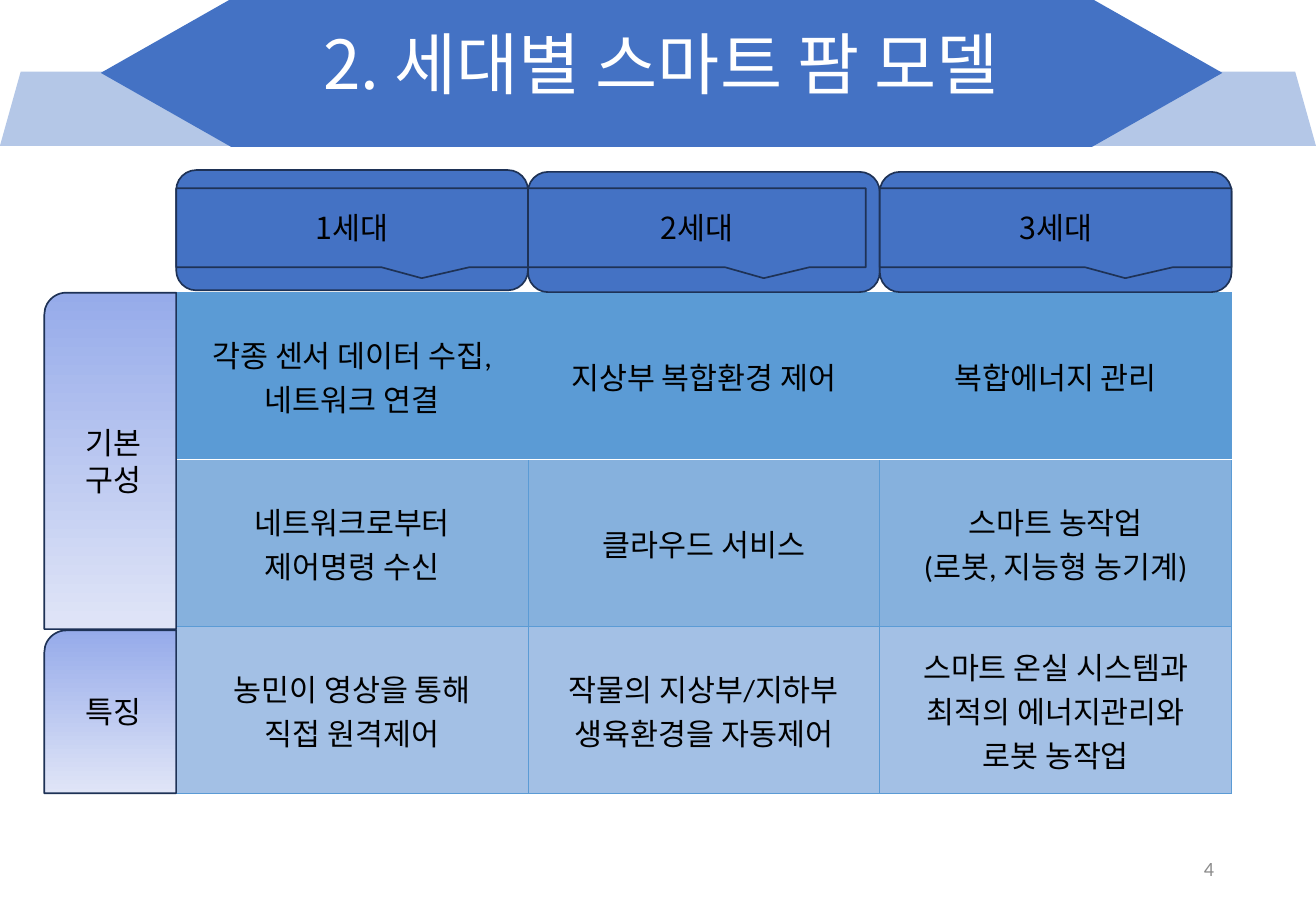
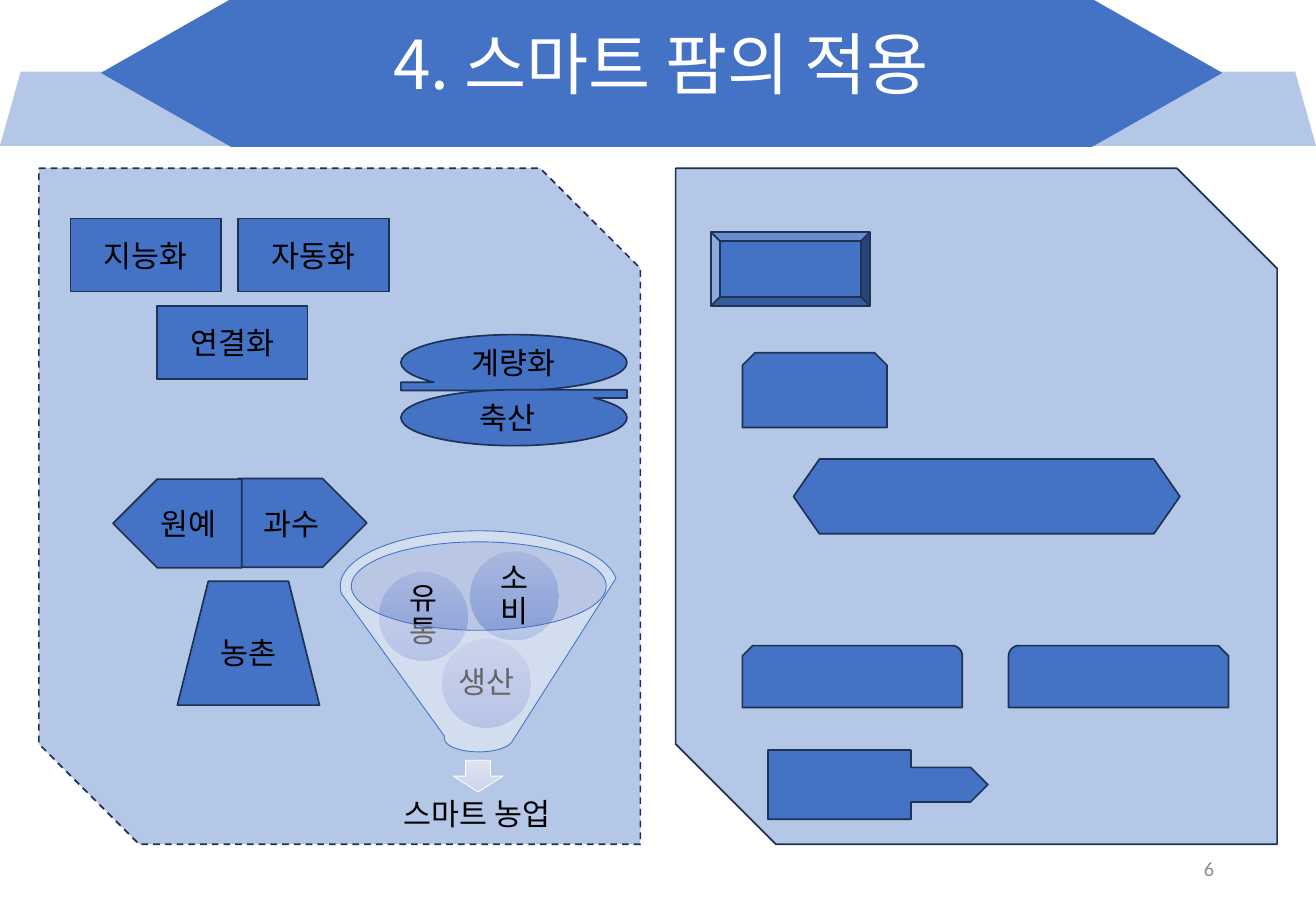
"""Build two slides on smart farm generations and smart farm applications."""
from lxml import etree
from pptx import Presentation
from pptx import util as u
from pptx.dml.color import RGBColor
from pptx.enum import dml, shapes, text
from pptx.oxml import ns

CELL = u.Inches(0.1)
COLUMNS, ROWS = 108.3, 75
BLUE, PALE, NAVY, SKY = "4472C4", "B4C7E7", "1E3256", "5B9BD5"
BLACK, WHITE, GREY = "000000", "FFFFFF", "8C8C8C"
LILAC = ("96ABEA", "E0E5F7")
BALL = ("A8B7DF", "889ED7")
ARROW = ("DEE3F2", "CCD3EB")
KOREAN, LATIN = "Noto Sans CJK KR", "Calibri"
Kind = shapes.MSO_SHAPE
Align = text.PP_ALIGN
color = RGBColor.from_string


def write(frame, words, size=18, ink=BLACK, font=KOREAN, align=Align.CENTER, spacing=None):
    para = frame.paragraphs[0]
    para.alignment = align
    if spacing:
        para.line_spacing = spacing
    for number, line in enumerate(words.split("\n")):
        if number:
            para.add_line_break()
        span = para.add_run()
        span.text = line
        span.font.size = u.Pt(size)
        span.font.name = font
        span.font.color.rgb = color(ink)
        etree.SubElement(span.font._element, ns.qn("a:ea"), typeface=KOREAN)


def draw(parent, kind, left, top, width, height, words="", fill=BLUE, line=NAVY, weight=1,
         adjust=(), flip=None, alpha=None, inset=None, **style):
    place = [round(value * CELL) for value in (left, top, width, height)]
    if kind is None:
        box = parent.add_textbox(*place)
    else:
        box = parent.add_shape(kind, *place)
        box.shadow.inherit = False
        if isinstance(fill, tuple):
            box.fill.gradient()
            box.fill.gradient_angle = 270
            for stop, shade in zip(box.fill.gradient_stops, fill):
                stop.color.rgb = color(shade)
        else:
            box.fill.solid()
            box.fill.fore_color.rgb = color(fill)
        if alpha:
            shade = box.element.spPr.find(ns.qn("a:solidFill"))[0]
            etree.SubElement(shade, ns.qn("a:alpha"), val=str(alpha * 1000))
        if line:
            box.line.color.rgb = color(line)
            box.line.width = u.Pt(weight)
        else:
            box.line.fill.background()
        for index, value in enumerate(adjust):
            box.adjustments[index] = value
        if flip:
            box.element.spPr.xfrm.set(flip, "1")
    if words:
        frame = box.text_frame
        frame.word_wrap = True
        frame.vertical_anchor = text.MSO_ANCHOR.MIDDLE
        if inset is not None:
            frame.margin_left = frame.margin_right = inset
            frame.margin_top = frame.margin_bottom = inset
        write(frame, words, **style)
    return box


deck = Presentation()
deck.slide_width = round(COLUMNS * CELL)
deck.slide_height = ROWS * CELL

pages = []
for title, number in (("2. 세대별 스마트 팜 모델", "4"), ("4. 스마트 팜의 적용", "6")):
    page = deck.slides.add_slide(deck.slide_layouts[6])
    draw(page.shapes, Kind.TRAPEZOID, 0, 5.9, COLUMNS, 6.1, fill=PALE, line=None, adjust=[0.28])
    draw(page.shapes, Kind.HEXAGON, 8.3, -0.1, 92.3, 12.2, line=None, adjust=[0.88])
    draw(page.shapes, None, 7.7, 1.8, 93.4, 7.5, title, size=40, ink=WHITE, spacing=0.9)
    draw(page.shapes, None, 76.5, 69.5, 24.4, 4, number, size=12, ink=GREY, font=LATIN,
         align=Align.RIGHT)
    pages.append(page)
models, uses = pages

TABLE_LEFT, TABLE_TOP, TABLE_COLUMN, TABLE_ROW = 14.5, 24.1, 28.95, 13.75
contents = (
    (SKY, ("각종 센서 데이터 수집,\n네트워크 연결", "지상부 복합환경 제어", "복합에너지 관리")),
    ("86B1DD", ("네트워크로부터\n제어명령 수신", "클라우드 서비스",
                "스마트 농작업\n(로봇, 지능형 농기계)")),
    ("A3C0E5", ("농민이 영상을 통해\n직접 원격제어", "작물의 지상부/지하부\n생육환경을 자동제어",
                "스마트 온실 시스템과\n최적의 에너지관리와\n로봇 농작업")),
)
table = models.shapes.add_table(
    3, 3, *[round(value * CELL) for value in
            (TABLE_LEFT, TABLE_TOP, 3 * TABLE_COLUMN, 3 * TABLE_ROW)]).table
table.first_row = table.horz_banding = False
for row, (shade, entries) in enumerate(contents):
    for column, words in enumerate(entries):
        cell = table.cell(row, column)
        cell.vertical_anchor = text.MSO_ANCHOR.MIDDLE
        cell.fill.solid()
        cell.fill.fore_color.rgb = color(shade)
        write(cell.text_frame, words, font=LATIN)
        for order, side in enumerate(("lnL", "lnR", "lnT", "lnB")):
            divider = (row, side) in ((0, "lnB"), (1, "lnT"))
            border = etree.Element(ns.qn(f"a:{side}"), w=str(u.Pt(1 if divider else 0.5)))
            paint = etree.SubElement(border, ns.qn("a:solidFill"))
            etree.SubElement(paint, ns.qn("a:srgbClr"), val=WHITE if divider else SKY)
            cell._tc.get_or_add_tcPr().insert(order, border)

for index, (top, width) in enumerate(((14, 28.95), (14.15, 27.8), (14.15, 28.95))):
    left = TABLE_LEFT + index * TABLE_COLUMN
    draw(models.shapes, Kind.ROUNDED_RECTANGLE, left, top, TABLE_COLUMN, 9.9)
    draw(models.shapes, Kind.RECTANGULAR_CALLOUT, left, 15.5, width, 6.5, f"{index + 1}세대",
         adjust=[0.198, 0.639])

for top, height, words in ((24.1, 27.7, "기본\n구성"), (51.9, 13.4, "특징")):
    draw(models.shapes, Kind.ROUND_1_RECTANGLE, 3.65, top, 10.85, height, words, fill=LILAC,
         flip="flipH")

PANEL_TOP, PANEL_WIDTH, PANEL_HEIGHT = 13.85, 49.5, 55.65
draw(uses.shapes, Kind.SNIP_2_DIAG_RECTANGLE, 55.6, PANEL_TOP, PANEL_WIDTH, PANEL_HEIGHT, fill=PALE)
for kind, left, top, width, height, adjust, flip in (
    (Kind.BEVEL, 58.5, 19.1, 13.1, 6.1, (), None),
    (Kind.SNIP_2_SAME_RECTANGLE, 61.1, 29.05, 11.9, 6.15, (), None),
    (Kind.LEFT_RIGHT_ARROW, 65.3, 37.8, 31.8, 6.15, (1, 0.347), None),
    (Kind.SNIP_ROUND_RECTANGLE, 83, 53.15, 18.1, 5.1, (), None),
    (Kind.SNIP_ROUND_RECTANGLE, 61.1, 53.15, 18.1, 5.1, (), "flipH"),
    (Kind.RIGHT_ARROW_CALLOUT, 63.2, 61.75, 18.1, 5.7, (0.5, 0.25, 0.25, 0.65), None),
):
    draw(uses.shapes, kind, left, top, width, height, adjust=adjust, flip=flip)

farm = uses.shapes.add_group_shape().shapes
panel = draw(farm, Kind.SNIP_2_DIAG_RECTANGLE, 3.2, PANEL_TOP, PANEL_WIDTH, PANEL_HEIGHT, fill=PALE)
panel.line.dash_style = dml.MSO_LINE.DASH
for kind, left, top, width, height, words, flip in (
    (Kind.RECTANGLE, 5.8, 18, 12.4, 6, "지능화", None),
    (Kind.RECTANGLE, 12.9, 25.2, 12.4, 6, "연결화", None),
    (Kind.RECTANGLE, 19.6, 18, 12.4, 6, "자동화", None),
    (Kind.FLOWCHART_SEQUENTIAL_ACCESS_STORAGE, 33, 27.55, 18.6, 4.6, "계량화", "flipH"),
    (Kind.FLOWCHART_SEQUENTIAL_ACCESS_STORAGE, 33, 32.1, 18.6, 4.6, "", "flipV"),
    (Kind.PENTAGON, 19.6, 39.4, 10.6, 7.3, "과수", None),
    (Kind.PENTAGON, 9.3, 39.45, 10.6, 7.3, "원예", "flipH"),
    (Kind.TRAPEZOID, 14.6, 47.85, 11.7, 10.2, "농촌", None),
):
    draw(farm, kind, left, top, width, height, words, flip=flip, inset=0)
draw(farm, None, 38.5, 32.4, 9.1, 4, "축산", align=Align.LEFT)

draw(farm, Kind.OVAL, 28.8, 44.8, 21, 7.3, fill="C1C9E4", line=None, alpha=40)
draw(farm, Kind.DOWN_ARROW, 37.3, 62.6, 4.1, 2.6, fill=ARROW, line=WHITE, weight=0.5)
draw(farm, None, 29.5, 64.7, 19.5, 4.9, "스마트 농업", spacing=0.9)
for left, top, words in ((36.4, 52.6, "생산"), (31.2, 47.1, "유\n통"), (38.7, 45.4, "소\n비")):
    draw(farm, Kind.OVAL, left, top, 7.3, 7.3, words, fill=BALL, line=None, inset=0, spacing=0.9)
draw(farm, Kind.FUNNEL, 28, 43.7, 22.8, 18.2, fill=WHITE, line=BLUE, weight=0.5, alpha=40)

deck.save("out.pptx")
